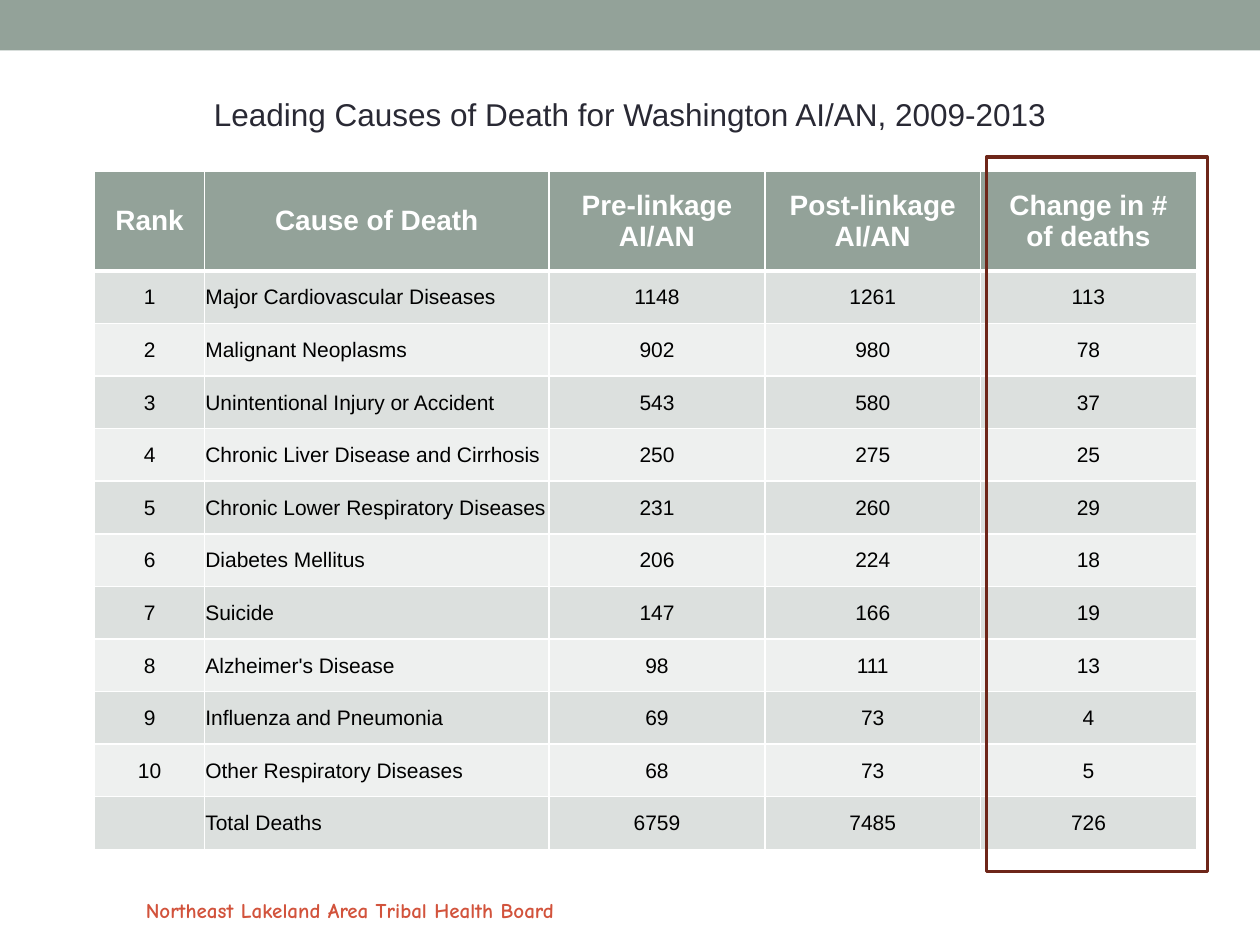
"""Build a slide with a table of leading causes of death."""
from lxml import etree
from pptx import Presentation
from pptx import util as u
from pptx.dml.color import RGBColor
from pptx.enum import shapes, text
from pptx.oxml import ns

COLORS = {
    "sage": "93A299", "band_dark": "DCE0DE", "band_light": "EEF0EF",
    "white": "FFFFFF", "black": "000000", "ink": "292934",
    "red": "D2533C", "maroon": "6E2619",
}
HEADERS = ["Rank", "Cause of Death", "Pre-linkage AI/AN",
           "Post-linkage AI/AN", "Change in # of deaths"]
CAUSES = [
    ("Major Cardiovascular Diseases", 1148, 1261, 113),
    ("Malignant Neoplasms", 902, 980, 78),
    ("Unintentional Injury or Accident", 543, 580, 37),
    ("Chronic Liver Disease and Cirrhosis", 250, 275, 25),
    ("Chronic Lower Respiratory Diseases", 231, 260, 29),
    ("Diabetes Mellitus", 206, 224, 18),
    ("Suicide", 147, 166, 19),
    ("Alzheimer's Disease", 98, 111, 13),
    ("Influenza and Pneumonia", 69, 73, 4),
    ("Other Respiratory Diseases", 68, 73, 5),
]
TOTAL = ("", "Total Deaths", 6759, 7485, 726)
COL_WIDTHS = [2.21, 6.95, 4.35, 4.35, 4.35]
HEADER_HEIGHT, ROW_HEIGHT = 2, 1.06
CENTER, LEFT = text.PP_ALIGN.CENTER, text.PP_ALIGN.LEFT


def rgb(name):
    return RGBColor.from_string(COLORS[name])


def box(*lengths):
    return [u.Cm(v) for v in lengths]


def format_text(tf, size, color, font="Arial", bold=False, align=LEFT):
    for p in tf.paragraphs:
        p.alignment = align
        for r in p.runs:
            r.font.name, r.font.size, r.font.bold = font, u.Pt(size), bold
            r.font.color.rgb = rgb(color)


def add_rect(s, place, fill=None, line=None, width=0):
    sp = s.shapes.add_shape(shapes.MSO_SHAPE.RECTANGLE, *box(*place))
    sp.shadow.inherit = False
    if fill:
        sp.fill.solid()
        sp.fill.fore_color.rgb = rgb(fill)
    else:
        sp.fill.background()
    if line:
        sp.line.color.rgb = rgb(line)
        sp.line.width = u.Pt(width)
    else:
        sp.line.fill.background()


def add_footer(s, words):
    sp = s.shapes.add_textbox(*box(2.69, 17.96, 9.96, 0.76))
    tf = sp.text_frame
    tf.word_wrap = True
    tf.text = words
    format_text(tf, 12, "red", "Comic Neue", True)


def set_title(s, words):
    sp = s.shapes.title
    sp.left, sp.top, sp.width, sp.height = box(2.22, 1.78, 20.96, 1.03)
    tf = sp.text_frame
    tf.text = words
    tf.vertical_anchor = text.MSO_ANCHOR.MIDDLE
    format_text(tf, 18, "ink", align=CENTER)


def set_borders(cell, top, bottom):
    tc_pr = cell._tc.get_or_add_tcPr()
    for side, width in (("L", 1), ("R", 1), ("T", top), ("B", bottom)):
        ln = etree.SubElement(tc_pr, ns.qn(f"a:ln{side}"), w=str(u.Pt(width)))
        fill = etree.SubElement(ln, ns.qn("a:solidFill"))
        etree.SubElement(fill, ns.qn("a:srgbClr"), val=COLORS["white"])


def fill_cell(cell, value, row, col):
    header = row == 0
    set_borders(cell, 3 if row == 1 else 1, 3 if header else 1)
    band = "band_dark" if row % 2 else "band_light"
    cell.fill.solid()
    cell.fill.fore_color.rgb = rgb("sage" if header else band)
    cell.vertical_anchor = text.MSO_ANCHOR.MIDDLE
    cell.text = str(value)
    if header:
        format_text(cell.text_frame, 16, "white", bold=True, align=CENTER)
    else:
        cell.margin_left = cell.margin_right = cell.margin_top = u.Cm(0.02)
        cell.margin_bottom = 0
        format_text(cell.text_frame, 12, "black",
                    align=LEFT if col == 1 else CENTER)


def add_death_table(s):
    ranked = [(rank, *cause) for rank, cause in enumerate(CAUSES, 1)]
    rows = [HEADERS, *ranked, TOTAL]
    height = HEADER_HEIGHT + ROW_HEIGHT * (len(rows) - 1)
    frame = s.shapes.add_table(len(rows), len(HEADERS),
                               *box(1.91, 3.46, sum(COL_WIDTHS), height))
    table = frame.table
    table.horz_banding = False
    for column, width in zip(table.columns, COL_WIDTHS):
        column.width = u.Cm(width)
    for i, values in enumerate(rows):
        table.rows[i].height = u.Cm(ROW_HEIGHT if i else HEADER_HEIGHT)
        for j, value in enumerate(values):
            fill_cell(table.cell(i, j), value, i, j)


def main():
    prs = Presentation()
    prs.slide_width, prs.slide_height = box(25.4, 19.05)
    s = prs.slides.add_slide(prs.slide_layouts[5])
    add_rect(s, (0, 0, 25.4, 1.02), fill="sage")
    add_footer(s, "Northeast Lakeland Area Tribal Health Board")
    add_death_table(s)
    set_title(s, "Leading Causes of Death for Washington AI/AN, 2009-2013")
    add_rect(s, (19.89, 3.17, 4.45, 14.4), line="maroon", width=2.08)
    prs.save("out.pptx")


if __name__ == "__main__":
    main()
